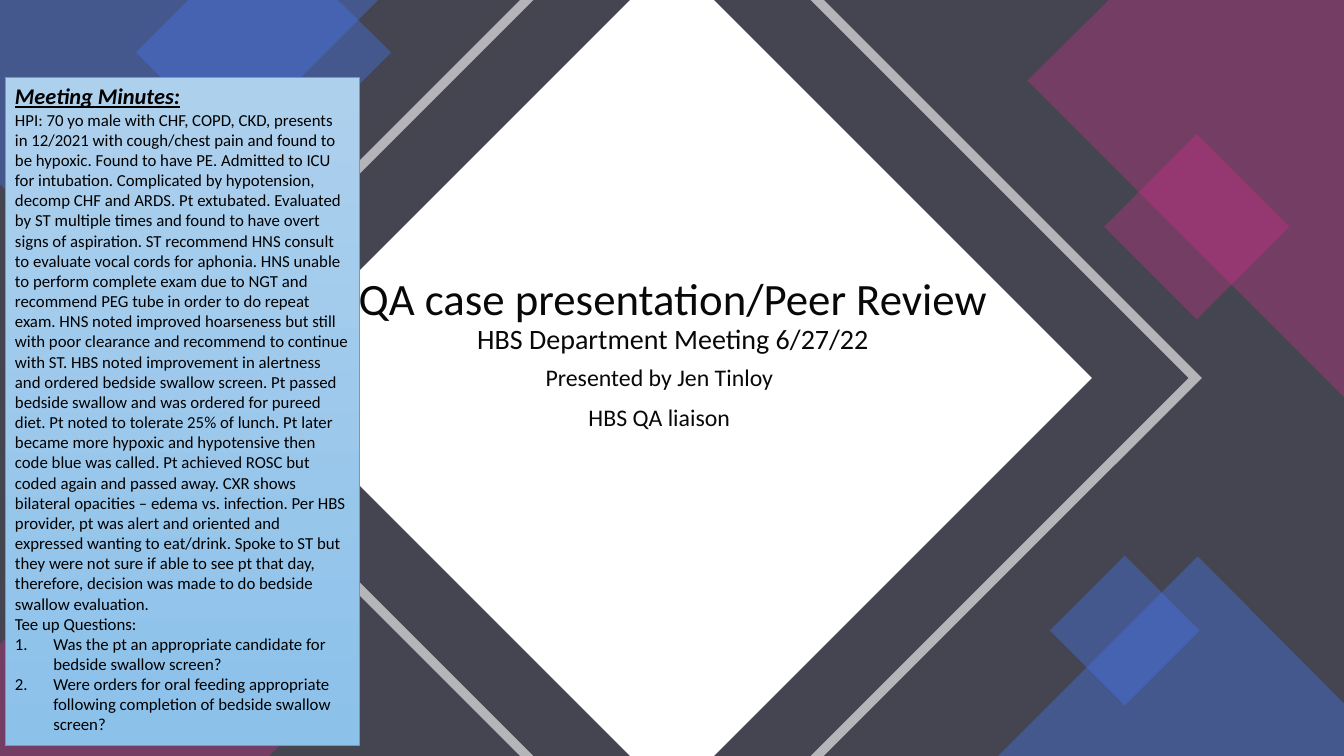
"""Build the opening slide of a case review meeting, with its minutes panel."""
import pptx
import pptx.dml.color
import pptx.enum.shapes
import pptx.enum.text
import pptx.oxml.ns
import pptx.util
from lxml import etree

Inches, Pt = pptx.util.Inches, pptx.util.Pt
RGB = pptx.dml.color.RGBColor
TEXT = pptx.enum.text
RECTANGLE = pptx.enum.shapes.MSO_SHAPE.RECTANGLE

WIDTH, HEIGHT = 13.33, 7.5
MIDDLE = HEIGHT / 2
FONT = "Calibri"
SLATE, WHITE, BLACK = RGB(0x45, 0x45, 0x51), RGB(255, 255, 255), RGB(0, 0, 0)
INK = RGB(8, 8, 8)
BLUE, PINK = RGB(0x47, 0x75, 0xE7), RGB(0xE3, 0x2D, 0x91)
PANEL_TOP, PANEL_BOTTOM = RGB(0xAD, 0xD0, 0xED), RGB(0x8C, 0xC1, 0xEA)
PANEL_LINE = RGB(0x4E, 0xA6, 0xDC)

TITLE = [("QA case presentation/Peer Review", 32), ("HBS Department Meeting 6/27/22", 20)]
PRESENTER = [("Presented by Jen Tinloy", 17), ("HBS QA liaison", 17)]
HEADING = "Meeting Minutes:"
HISTORY = [
    "HPI: 70 yo male with CHF, COPD, CKD, presents in 12/2021 with cough/chest pain and",
    "found to be hypoxic. Found to have PE. Admitted to ICU for intubation. Complicated by",
    "hypotension, decomp CHF and ARDS. Pt extubated. Evaluated by ST multiple times and found",
    "to have overt signs of aspiration. ST recommend HNS consult to evaluate vocal cords for",
    "aphonia. HNS unable to perform complete exam due to NGT and recommend PEG tube in order",
    "to do repeat exam. HNS noted improved hoarseness but still with poor clearance and",
    "recommend to continue with ST. HBS noted improvement in alertness and ordered bedside",
    "swallow screen. Pt passed bedside swallow and was ordered for pureed diet. Pt noted to",
    "tolerate 25% of lunch. Pt later became more hypoxic and hypotensive then code blue was",
    "called. Pt achieved ROSC but coded again and passed away. CXR shows bilateral opacities –",
    "edema vs. infection. Per HBS provider, pt was alert and oriented and expressed wanting to",
    "eat/drink. Spoke to ST but they were not sure if able to see pt that day, therefore,",
    "decision was made to do bedside swallow evaluation."]
QUESTIONS_LABEL = "Tee up Questions:"
QUESTIONS = [
    "Was the pt an appropriate candidate for bedside swallow screen?",
    "Were orders for oral feeding appropriate following completion of bedside swallow screen?"]

CORNERS = [
    ([(0, 0), (3.75, 0), (0.96, 2.79), (0, 1.83)], BLUE, 40),
    ([(1.87, 0), (3.35, 0), (3.88, 0.52), (2.61, 1.79), (1.35, 0.52)], BLUE, 40),
    ([(11, 0), (WIDTH, 0), (WIDTH, 3.94), (10.19, 0.8)], PINK, 30),
    ([(1.27, 5.12), (3.16, 7.01), (2.67, HEIGHT), (0, HEIGHT), (0, 6.39)], PINK, 30),
    ([(11.88, 5.52), (WIDTH, 6.98), (WIDTH, HEIGHT), (9.9, HEIGHT)], BLUE, 40)]
SQUARES = [
    (11.22, 1.6, 1.3, PINK, 30),
    (1.94, 5.95, 1.02, PINK, 30),
    (10.63, 5.73, 1.05, BLUE, 40)]
DIAMOND = [(6.25, 0), (7.08, 0), (10.83, MIDDLE), (7.08, HEIGHT), (6.25, HEIGHT), (2.5, MIDDLE)]
CHEVRON = [(8.04, 0), (8.17, 0), (11.92, MIDDLE), (8.17, HEIGHT), (8.04, HEIGHT), (11.79, MIDDLE)]


def paint(shape, color, opacity=100):
    shape.shadow.inherit = False
    shape.line.fill.background()
    shape.fill.solid()
    shape.fill.fore_color.rgb = color
    if opacity < 100:
        fill = shape._element.spPr.find(pptx.oxml.ns.qn("a:solidFill"))
        etree.SubElement(fill[0], pptx.oxml.ns.qn("a:alpha"), val=str(opacity * 1000))


def add_box(page, left, top, width, height):
    return page.shapes.add_shape(RECTANGLE, *map(Inches, (left, top, width, height)))


def add_outline(page, contours, color, opacity=100):
    builder = None
    for contour in contours:
        points = [(Inches(x), Inches(y)) for x, y in contour]
        if builder is None:
            builder = page.shapes.build_freeform(*points[0], scale=1.0)
        else:
            builder.move_to(*points[0])
        builder.add_line_segments(points[1:], close=True)
    paint(builder.convert_to_shape(), color, opacity)


def style(para, size, color):
    for span in para.runs:
        span.font.name, span.font.size, span.font.color.rgb = FONT, Pt(size), color


def fill_placeholder(page, holder, place, lines, anchor, space_before):
    holder.left, holder.top, holder.width, holder.height = map(Inches, place)
    frame = holder.text_frame
    frame.text = "\n".join(words for words, size in lines)
    frame.word_wrap = True
    frame.auto_size = TEXT.MSO_AUTO_SIZE.NONE
    frame.vertical_anchor = anchor
    for para, (words, size) in zip(frame.paragraphs, lines):
        para.alignment = TEXT.PP_ALIGN.CENTER
        para.line_spacing = 0.9
        para.space_before = Pt(space_before)
        style(para, size, INK)
    page.shapes._spTree.append(holder._element)


def add_minutes(page):
    panel = add_box(page, 0.05, 0.77, 3.51, 6.63)
    panel.shadow.inherit = False
    panel.fill.gradient()
    panel.fill.gradient_angle = 270
    for stop, color in zip(panel.fill.gradient_stops, (PANEL_TOP, PANEL_BOTTOM)):
        stop.color.rgb = color
    panel.line.color.rgb = PANEL_LINE
    panel.line.width = Pt(0.5)
    frame = panel.text_frame
    frame.text = "\n".join([HEADING, " ".join(HISTORY), QUESTIONS_LABEL, *QUESTIONS])
    frame.word_wrap = True
    frame.auto_size = TEXT.MSO_AUTO_SIZE.SHAPE_TO_FIT_TEXT
    frame.vertical_anchor = TEXT.MSO_ANCHOR.TOP
    for para in frame.paragraphs:
        para.alignment = TEXT.PP_ALIGN.LEFT
        style(para, 12, BLACK)
    heading = frame.paragraphs[0].runs[0].font
    heading.size = Pt(16)
    heading.bold = heading.italic = heading.underline = True
    for para in frame.paragraphs[-len(QUESTIONS):]:
        settings = para._p.get_or_add_pPr()
        settings.set("marL", str(Inches(0.38)))
        settings.set("indent", str(Inches(-0.38)))
        etree.SubElement(settings, pptx.oxml.ns.qn("a:buAutoNum"), type="arabicPeriod")


def main():
    deck = pptx.Presentation()
    deck.slide_width, deck.slide_height = Inches(WIDTH), Inches(HEIGHT)
    page = deck.slides.add_slide(deck.slide_layouts[0])
    paint(add_box(page, 0, 0, WIDTH, HEIGHT), SLATE)
    for contour, color, opacity in CORNERS:
        add_outline(page, [contour], color, opacity)
    for left, top, side, color, opacity in SQUARES:
        square = add_box(page, left, top, side, side)
        square.rotation = 45
        paint(square, color, opacity)
    add_outline(page, [DIAMOND], WHITE)
    mirrored = [(WIDTH - x, y) for x, y in CHEVRON]
    add_outline(page, [CHEVRON, mirrored], WHITE, 60)
    title, subtitle = page.placeholders
    fill_placeholder(page, subtitle, (4.73, 3.58, 3.62, 0.82), PRESENTER,
                     TEXT.MSO_ANCHOR.TOP, 10)
    fill_placeholder(page, title, (3.16, 2.57, 7.03, 1.44), TITLE,
                     TEXT.MSO_ANCHOR.MIDDLE, 0)
    title.text_frame.margin_bottom = Inches(0.35)
    add_minutes(page)
    deck.save("out.pptx")


if __name__ == "__main__":
    main()
